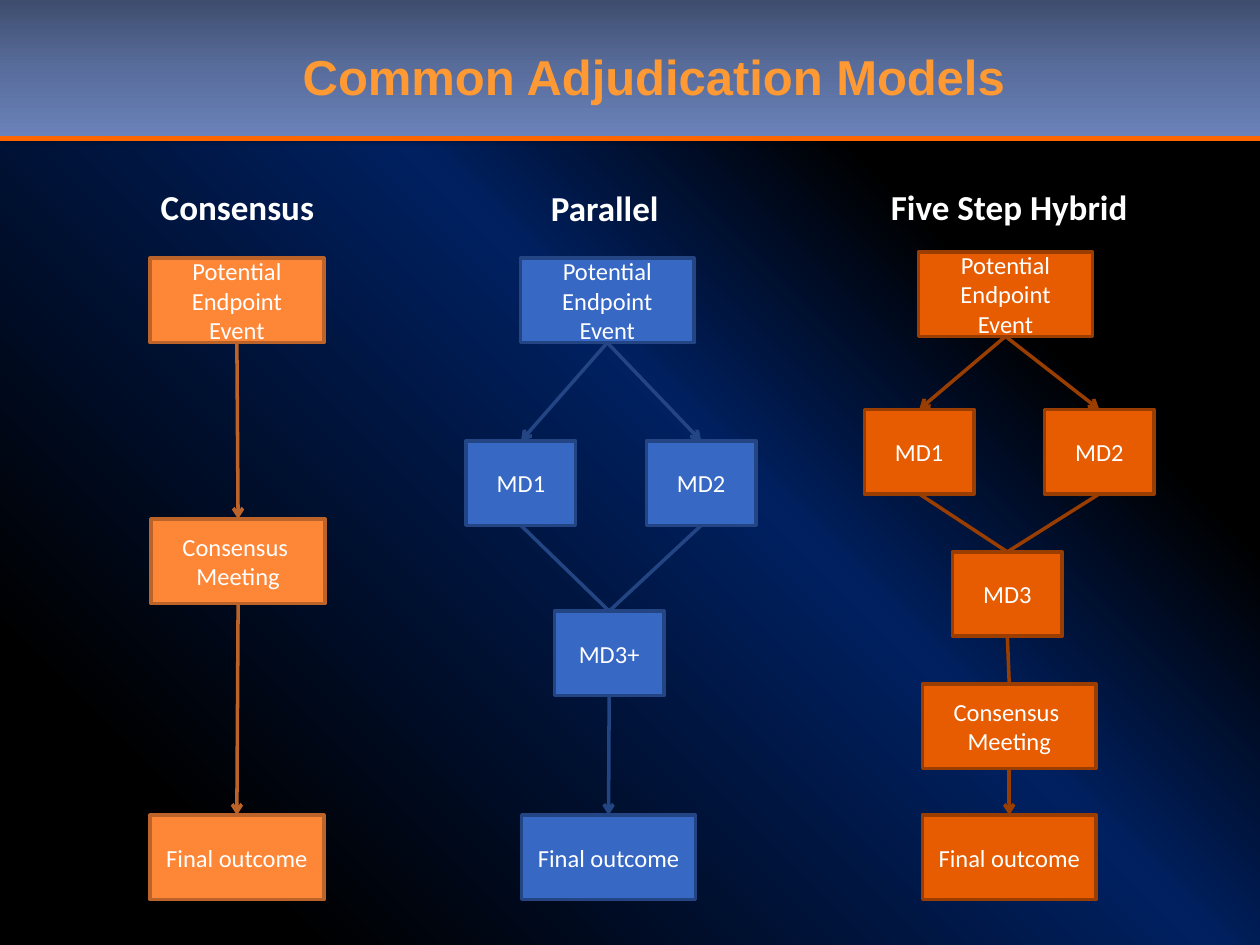
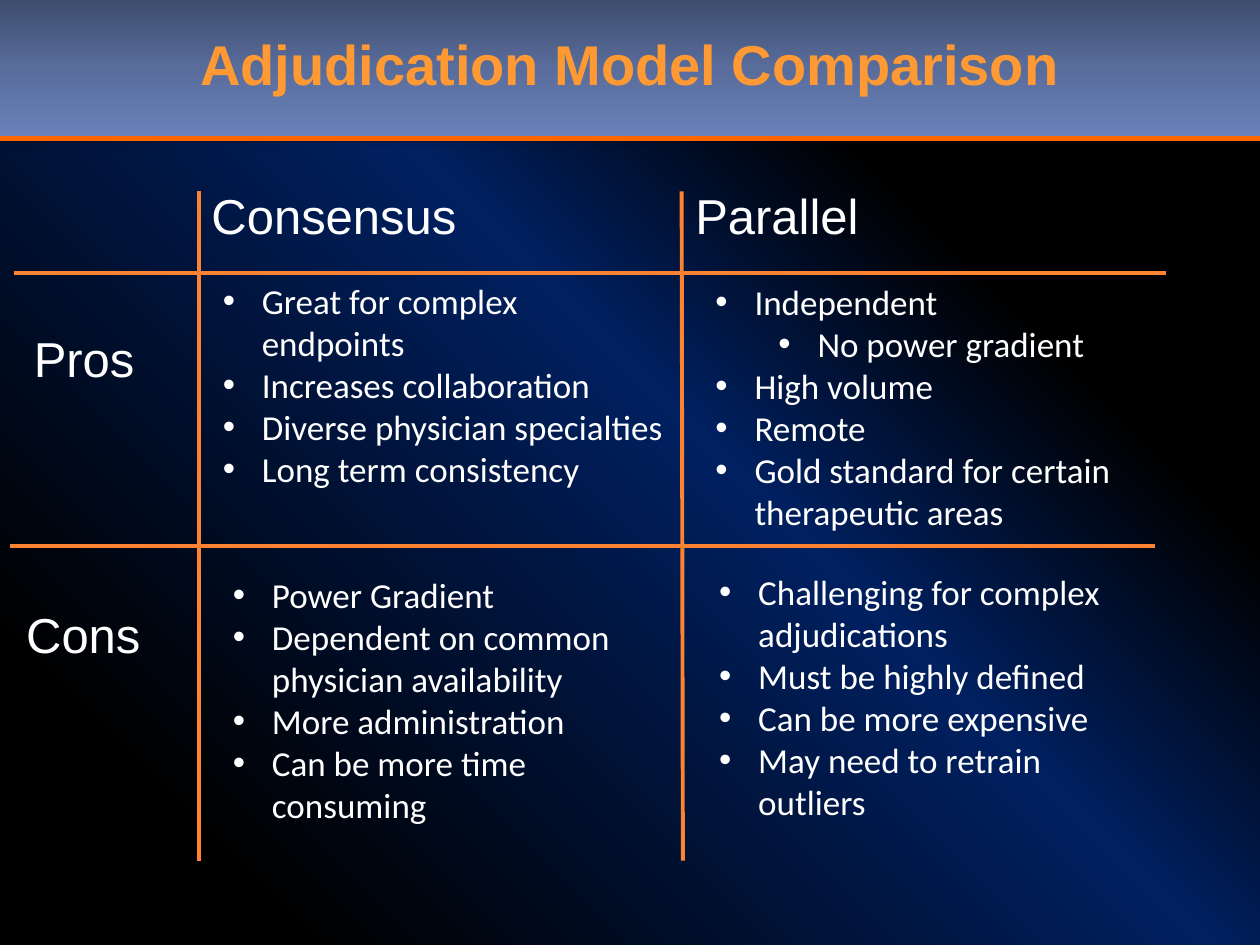
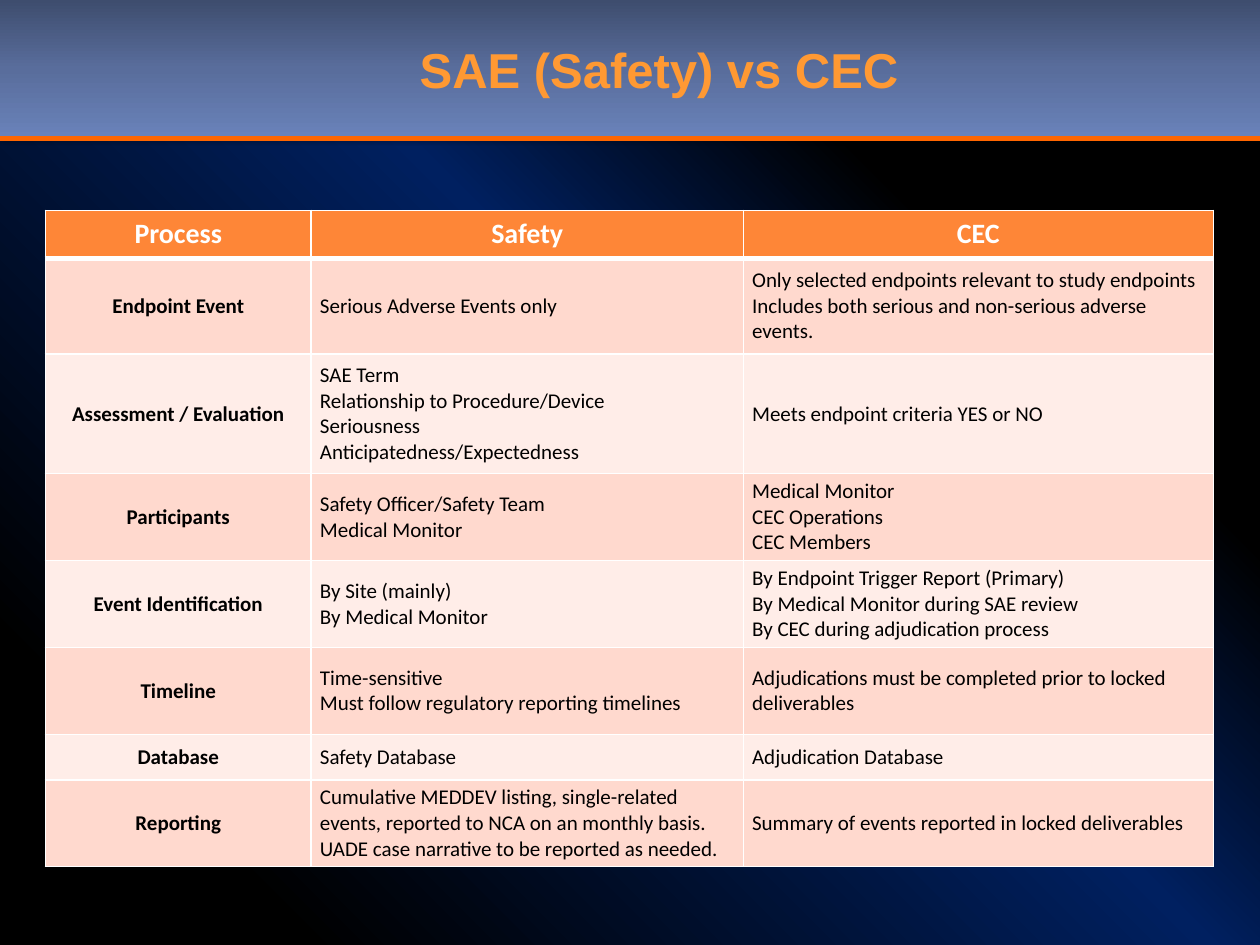
from dataclasses import dataclass

from lxml.etree import SubElement
from pptx import Presentation
from pptx.dml.color import RGBColor
from pptx.enum.shapes import MSO_CONNECTOR, MSO_SHAPE
from pptx.enum.text import MSO_ANCHOR as ANCHOR, PP_ALIGN as ALIGN
from pptx.oxml.ns import qn
from pptx.util import Inches, Pt


@dataclass(frozen=True)
class Theme:
    heading_font: str = "Arial"
    body_font: str = "Calibri"
    white: str = "FFFFFF"
    black: str = "000000"
    title: str = "FF9933"
    rule: str = "FF6600"
    grid: str = "FD8231"
    header: str = "FE8637"
    stripes: tuple = ("FFD9CE", "FFEDE8")
    backdrop: tuple = ((14, "000000"), (55, "002060"), (75, "000000"))
    band: tuple = ((0, "3E4D6E"), (50, "596D9C"), (100, "6982B9"))
    title_size: int = 28
    wide_title_size: int = 32
    label_size: int = 28
    body_size: int = 20
    column_size: int = 16
    step_size: int = 14
    cell_size: int = 12


@dataclass(frozen=True)
class Model:
    name: str
    heading_at: tuple
    fill: str
    line: str
    steps: dict
    links: tuple


THEME = Theme()
WIDE, NARROW, STEP_HEIGHT = 1.38, 0.87, 0.67
EVENT, MEETING, OUTCOME = "Potential Endpoint Event", "Consensus \nMeeting", "Final outcome"

MODELS = (
    Model("Consensus", (1.17, 1.42, 1.43, 0.44), "FE8637", "BC6329",
          {EVENT: (1.19, 2.05, WIDE), MEETING: (1.2, 4.12, WIDE),
           OUTCOME: (1.19, 6.47, WIDE)},
          ((EVENT, MEETING, True), (MEETING, OUTCOME, True))),
    Model("Parallel", (4.27, 1.43, 1.06, 0.44), "3668C4", "244583",
          {EVENT: (4.13, 2.05, WIDE), "MD1": (3.7, 3.5, NARROW),
           "MD2": (5.13, 3.5, NARROW), "MD3+": (4.4, 4.85, NARROW),
           OUTCOME: (4.14, 6.47, WIDE)},
          ((EVENT, "MD1", True), (EVENT, "MD2", True), ("MD1", "MD3+", False),
           ("MD2", "MD3+", False), ("MD3+", OUTCOME, True))),
    Model("Five Step Hybrid", (6.92, 1.42, 2.18, 0.44), "E75C01", "9A3D01",
          {EVENT: (7.29, 2, WIDE), "MD1": (6.86, 3.25, NARROW),
           "MD2": (8.29, 3.25, NARROW), "MD3": (7.56, 4.38, NARROW),
           MEETING: (7.32, 5.43, WIDE), OUTCOME: (7.32, 6.47, WIDE)},
          ((EVENT, "MD1", True), (EVENT, "MD2", True), ("MD1", "MD3", False),
           ("MD2", "MD3", False), ("MD3", MEETING, False),
           (MEETING, OUTCOME, True))),
)

GRID_LINES = ((5.41, 1.52, 5.42, 6.83), (0.11, 2.17, 9.25, 2.17),
              (0.08, 4.33, 9.17, 4.33), (1.58, 1.52, 1.58, 6.83))

GRID_LABELS = {"Consensus": (1.58, 1.42, 3.42, 0.57),
               "Parallel": (5.42, 1.42, 2.58, 0.57),
               "Pros": (0.17, 2.56, 3.42, 0.57),
               "Cons": (0.11, 4.75, 1.67, 0.57)}

ARGUMENTS = (
    ((1.67, 2.17, 3.73, 1.78), (),
     "Great for complex endpoints\nIncreases collaboration\n"
     "Diverse physician specialties\nLong term consistency"),
    ((5.58, 2.18, 3.59, 2.12), (1,),
     "Independent\nNo power gradient\nHigh volume\nRemote\n"
     "Gold standard for certain therapeutic areas"),
    ((1.75, 4.5, 3.55, 2.12), (),
     "Power Gradient\nDependent on common physician availability\n"
     "More administration\nCan be more time consuming"),
    ((5.61, 4.48, 3.56, 2.12), (),
     "Challenging for complex adjudications\nMust be highly defined\n"
     "Can be more expensive\nMay need to retrain outliers"),
)

COLUMN_WIDTHS = (2.11, 3.43, 3.73)
PROCESS_ROWS = (
    (0.38, "Process", "Safety", "CEC"),
    (0.76, "Endpoint Event", "Serious Adverse Events only",
     "Only selected endpoints relevant to study endpoints\n"
     "Includes both serious and non-serious adverse events."),
    (0.95, "Assessment / Evaluation",
     "SAE Term\nRelationship to Procedure/Device\nSeriousness\n"
     "Anticipatedness/Expectedness",
     "Meets endpoint criteria YES or NO"),
    (0.69, "Participants", "Safety Officer/Safety Team\nMedical Monitor",
     "Medical Monitor\nCEC Operations\nCEC Members"),
    (0.69, "Event Identification", "By Site (mainly)\nBy Medical Monitor",
     "By Endpoint Trigger Report (Primary)\n"
     "By Medical Monitor during SAE review\n"
     "By CEC during adjudication process"),
    (0.69, "Timeline",
     "Time-sensitive\nMust follow regulatory reporting timelines",
     "Adjudications must be completed prior to locked deliverables"),
    (0.36, "Database", "Safety Database", "Adjudication Database"),
    (0.69, "Reporting",
     "Cumulative MEDDEV listing, single-related events, reported to NCA on an "
     "monthly basis. UADE case narrative to be reported as needed.",
     "Summary of events reported in locked deliverables"),
)


def inches(values):
    return [Inches(value) for value in values]


def add_color(parent, color):
    return SubElement(parent, qn("a:srgbClr"), val=color)


def paint_gradient(owner, fill, stops, angle):
    fill.solid()
    solid = next(owner.element.iter(qn("a:solidFill")))
    gradient = SubElement(solid.getparent(), qn("a:gradFill"), rotWithShape="1")
    stop_list = SubElement(gradient, qn("a:gsLst"))
    for position, color in stops:
        add_color(SubElement(stop_list, qn("a:gs"), pos=str(position * 1000)), color)
    SubElement(gradient, qn("a:lin"), ang=str(angle * 60000), scaled="0")
    solid.getparent().replace(solid, gradient)


def add_shadow(effects, blur, distance, angle, opacity):
    shadow = SubElement(effects, qn("a:outerShdw"), blurRad=str(Pt(blur)),
                        dist=str(Pt(distance)), dir=str(angle * 60000),
                        algn="ctr", rotWithShape="0")
    SubElement(add_color(shadow, THEME.black), qn("a:alpha"), val=str(opacity * 1000))


def write(frame, text, *, size, font=THEME.body_font, color=THEME.white,
          bold=False, align=ALIGN.LEFT, spacing=None, bullets=False,
          nested=(), shadow=False):
    for index, line in enumerate(text.split("\n")):
        paragraph = frame.add_paragraph() if index else frame.paragraphs[0]
        paragraph.alignment = align
        if spacing:
            paragraph.line_spacing = spacing
        if bullets:
            level = int(index in nested)
            paragraph.level = level
            properties = paragraph._p.get_or_add_pPr()
            properties.set("marL", str(Inches(0.31 + 0.5 * level)))
            properties.set("indent", str(Inches(-0.31)))
            SubElement(properties, qn("a:buFont"), typeface="Arial")
            SubElement(properties, qn("a:buChar"), char="•")
        run = paragraph.add_run()
        run.text = line
        run.font.size = Pt(size)
        run.font.name = font
        run.font.bold = bold
        run.font.color.rgb = RGBColor.from_string(color)
        if shadow:
            run_format = run._r.get_or_add_rPr()
            effects = SubElement(run_format, qn("a:effectLst"))
            add_shadow(effects, 0, 2, 45, 100)
            run_format.find(qn("a:solidFill")).addnext(effects)


def add_label(slide, text, at, *, wrap=True, anchor=ANCHOR.TOP, **style):
    frame = slide.shapes.add_textbox(*inches(at)).text_frame
    frame.word_wrap = wrap
    frame.vertical_anchor = anchor
    write(frame, text, **style)


def add_line(slide, ends, color, width, arrow=False):
    line = slide.shapes.add_connector(MSO_CONNECTOR.STRAIGHT, *inches(ends))
    line.line.color.rgb = RGBColor.from_string(color)
    line.line.width = Pt(width)
    if arrow:
        SubElement(line.line._get_or_add_ln(), qn("a:tailEnd"), type="arrow")
    SubElement(line._element.spPr, qn("a:effectLst"))
    return line


def add_rectangle(slide, at):
    rectangle = slide.shapes.add_shape(MSO_SHAPE.RECTANGLE, *inches(at))
    rectangle.shadow.inherit = False
    return rectangle


def add_step(slide, text, place, model):
    left, top, width = place
    step = add_rectangle(slide, (left, top, width, STEP_HEIGHT))
    step.fill.solid()
    step.fill.fore_color.rgb = RGBColor.from_string(model.fill)
    step.line.color.rgb = RGBColor.from_string(model.line)
    step.line.width = Pt(2)
    step.text_frame.word_wrap = True
    step.text_frame.vertical_anchor = ANCHOR.MIDDLE
    write(step.text_frame, text, size=THEME.step_size, align=ALIGN.CENTER)
    return step


def add_model(slide, model):
    add_label(slide, model.name, model.heading_at, wrap=False,
              size=THEME.body_size, bold=True, align=ALIGN.CENTER)
    steps = {text: add_step(slide, text, place, model)
             for text, place in model.steps.items()}
    for start, end, arrow in model.links:
        link = add_line(slide, (0, 0, 1, 1), model.line, 2, arrow)
        link.begin_connect(steps[start], 2)
        link.end_connect(steps[end], 0)


def add_borders(cell, top, bottom):
    properties = cell._tc.get_or_add_tcPr()
    widths = {"a:lnL": 1, "a:lnR": 1, "a:lnT": top, "a:lnB": bottom}
    for index, (side, width) in enumerate(widths.items()):
        border = SubElement(properties, qn(side), w=str(Pt(width)))
        add_color(SubElement(border, qn("a:solidFill")), THEME.white)
        properties.insert(index, border)


def add_process_table(slide):
    heights = [row[0] for row in PROCESS_ROWS]
    table = slide.shapes.add_table(
        len(PROCESS_ROWS), len(COLUMN_WIDTHS),
        *inches((0.36, 1.67, sum(COLUMN_WIDTHS), sum(heights)))).table
    for column, width in zip(table.columns, COLUMN_WIDTHS):
        column.width = Inches(width)
    for row, (height, *texts) in enumerate(PROCESS_ROWS):
        table.rows[row].height = Inches(height)
        is_header = row == 0
        fill = THEME.header if is_header else THEME.stripes[(row - 1) % 2]
        for column, text in enumerate(texts):
            cell = table.cell(row, column)
            cell.fill.solid()
            cell.fill.fore_color.rgb = RGBColor.from_string(fill)
            cell.vertical_anchor = ANCHOR.MIDDLE
            cell.margin_left = cell.margin_right = Inches(0.07)
            cell.margin_top = cell.margin_bottom = Inches(0.04)
            add_borders(cell, 3 if row == 1 else 1, 3 if is_header else 1)
            is_heading = is_header or column == 0
            write(cell.text_frame, text, bold=is_heading,
                  size=THEME.column_size if is_header else THEME.cell_size,
                  color=THEME.white if is_header else THEME.black,
                  align=ALIGN.CENTER if is_heading else ALIGN.LEFT)


def add_titled_slide(deck, title, at, size=THEME.title_size):
    slide = deck.slides.add_slide(deck.slide_layouts[6])
    band = add_rectangle(slide, (0, 0, 10, 1.09))
    paint_gradient(band, band.fill, THEME.band, 90)
    band.line.fill.background()
    add_shadow(band._element.spPr.find(qn("a:effectLst")), 3.1, 1.8, 90, 35)
    add_line(slide, (0, 1.1, 10, 1.1), THEME.rule, 3)
    add_label(slide, title, at, anchor=ANCHOR.MIDDLE, size=size,
              font=THEME.heading_font, color=THEME.title, bold=True,
              align=ALIGN.CENTER, spacing=0.85, shadow=True)
    return slide


def main():
    deck = Presentation()
    deck.slide_width, deck.slide_height = Inches(10), Inches(7.5)
    master = deck.slide_master
    paint_gradient(master, master.background.fill, THEME.backdrop, 315)

    models = add_titled_slide(deck, "Common Adjudication Models",
                              (0.86, 0.15, 8.66, 0.98))
    for model in MODELS:
        add_model(models, model)

    comparison = add_titled_slide(deck, "Adjudication Model Comparison",
                                  (0, 0, 10, 1.09), THEME.wide_title_size)
    for ends in GRID_LINES:
        add_line(comparison, ends, THEME.grid, 2.25)
    for text, at in GRID_LABELS.items():
        add_label(comparison, text, at, size=THEME.label_size,
                  font=THEME.heading_font)
    for at, nested, text in ARGUMENTS:
        add_label(comparison, text, at, size=THEME.body_size,
                  bullets=True, nested=nested)

    processes = add_titled_slide(deck, "SAE (Safety) vs CEC",
                                 (1, 0.33, 8.46, 0.5))
    add_process_table(processes)
    deck.save("out.pptx")


if __name__ == "__main__":
    main()
